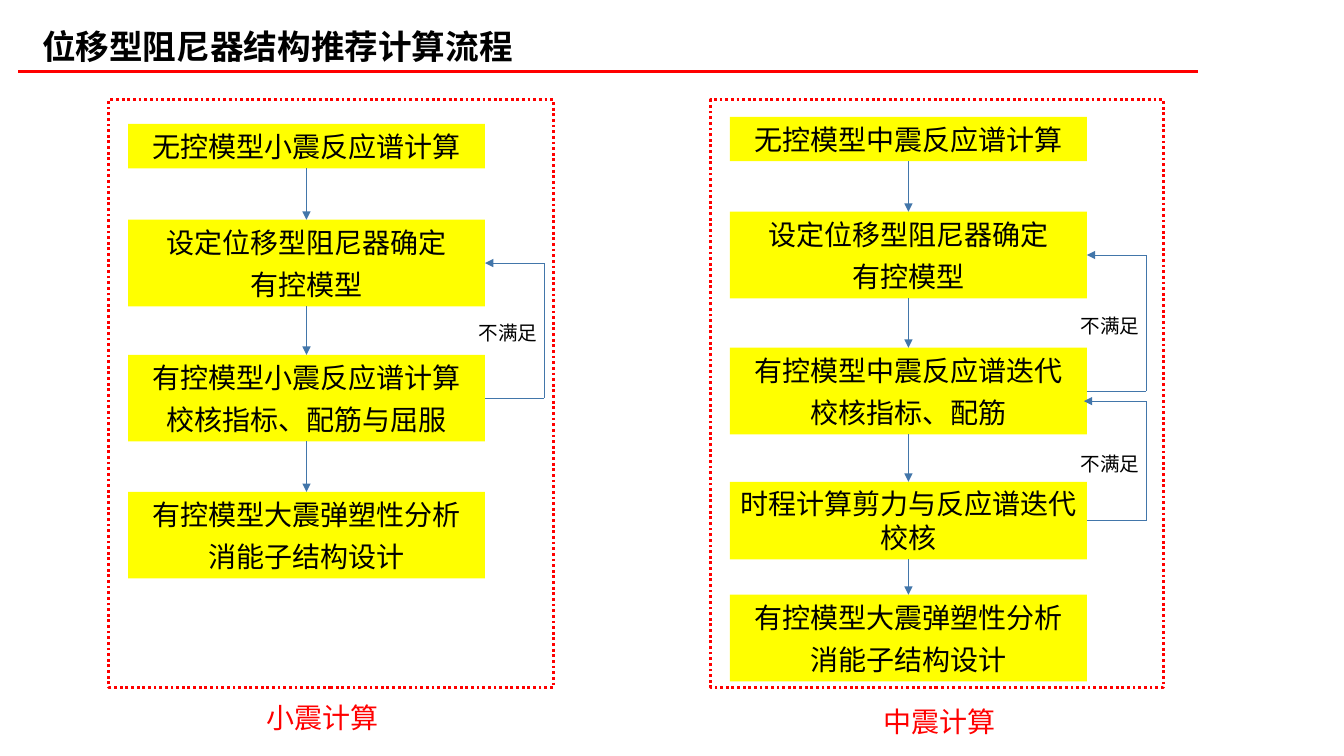
from dataclasses import dataclass

from lxml.etree import SubElement
from pptx import Presentation
from pptx.dml.color import RGBColor
from pptx.enum.dml import MSO_LINE
from pptx.enum.shapes import MSO_CONNECTOR, MSO_SHAPE
from pptx.enum.text import MSO_ANCHOR, MSO_AUTO_SIZE, PP_ALIGN
from pptx.oxml.ns import qn
from pptx.util import Inches, Pt


@dataclass(frozen=True)
class Theme:
    font: str = "Noto Sans CJK SC"
    black: RGBColor = RGBColor(0x00, 0x00, 0x00)
    red: RGBColor = RGBColor(0xFF, 0x00, 0x00)
    yellow: RGBColor = RGBColor(0xFF, 0xFF, 0x00)
    blue: RGBColor = RGBColor(0x42, 0x76, 0xAA)
    title_size: int = 24
    step_size: int = 20
    label_size: int = 14
    rule_width: float = 2.75
    frame_width: float = 2
    arrow_width: float = 0.5


@dataclass(frozen=True)
class Box:
    left: float
    top: float
    width: float
    height: float

    @property
    def right(self):
        return self.left + self.width

    @property
    def middle(self):
        return self.top + self.height / 2

    def lengths(self):
        return [Inches(value) for value in (self.left, self.top, self.width, self.height)]


@dataclass(frozen=True)
class Loop:
    source: int
    target: int
    drop: float = 0
    overlap: float = 0


THEME = Theme()
STEP_INSET = 0.19
STEP_WIDTH = 3.54
RISER_GAP = 0.59
LABEL_SHIFT = 2.88
LABEL_WIDTH = 1.57
LABEL_HEIGHT = 0.38


def write_text(shape, lines, size, color, align=None, bold=False, spacing=3, line_spacing=None, indent=0):
    frame = shape.text_frame
    frame.word_wrap = True
    frame.auto_size = MSO_AUTO_SIZE.SHAPE_TO_FIT_TEXT
    frame.text = "\n".join(lines)
    for index, paragraph in enumerate(frame.paragraphs):
        paragraph.alignment = align
        paragraph.space_before = Pt(spacing if index else 0)
        paragraph.space_after = Pt(spacing)
        if line_spacing:
            paragraph.line_spacing = line_spacing
        if indent:
            properties = paragraph._p.get_or_add_pPr()
            properties.set("marL", str(Inches(indent)))
            properties.set("indent", "0")
        for span in paragraph.runs:
            font = span.font
            font.name = THEME.font
            font.size = Pt(size)
            font.bold = bold
            font.color.rgb = color
            east_asian = SubElement(font._element, qn("a:ea"))
            east_asian.set("typeface", THEME.font)


def add_line(page, start, end, color=THEME.blue, width=THEME.arrow_width, arrow=False):
    points = [Inches(value) for value in (*start, *end)]
    line = page.shapes.add_connector(MSO_CONNECTOR.STRAIGHT, *points)
    line.line.color.rgb = color
    line.line.width = Pt(width)
    if arrow:
        SubElement(line.line._get_or_add_ln(), qn("a:tailEnd")).set("type", "triangle")
    SubElement(line._element.spPr, qn("a:effectLst"))
    return line


def add_title(page, box, text):
    title = page.shapes.add_textbox(*box.lengths())
    write_text(title, [text], THEME.title_size, THEME.black, PP_ALIGN.JUSTIFY,
               bold=True, spacing=6, line_spacing=1.2, indent=0.5)
    add_line(page, (0.18, 0.71), (11.88, 0.71), THEME.red, THEME.rule_width)


def add_frame(page, box):
    frame = page.shapes.add_shape(MSO_SHAPE.RECTANGLE, *box.lengths())
    frame.shadow.inherit = False
    frame.fill.background()
    frame.line.color.rgb = THEME.red
    frame.line.width = Pt(THEME.frame_width)
    frame.line.dash_style = MSO_LINE.ROUND_DOT


def add_step(page, box, lines):
    step = page.shapes.add_shape(MSO_SHAPE.RECTANGLE, *box.lengths())
    step.shadow.inherit = False
    step.fill.solid()
    step.fill.fore_color.rgb = THEME.yellow
    step.line.fill.background()
    step.text_frame.vertical_anchor = MSO_ANCHOR.MIDDLE
    write_text(step, lines, THEME.step_size, THEME.black, PP_ALIGN.CENTER)
    return step


def add_loop(page, boxes, shapes, loop):
    source, target = boxes[loop.source], boxes[loop.target]
    riser = source.right + RISER_GAP
    entry = target.middle + loop.drop
    foot = add_line(page, (source.right, source.middle), (riser, source.middle))
    foot.begin_connect(shapes[loop.source], 3)
    add_line(page, (riser, source.middle), (riser, entry))
    head = add_line(page, (riser, entry), (target.right - loop.overlap, entry), arrow=True)
    if not loop.drop:
        head.end_connect(shapes[loop.target], 3)
    center = (source.middle + entry) / 2
    label_box = Box(source.left + LABEL_SHIFT, center - LABEL_HEIGHT / 2, LABEL_WIDTH, LABEL_HEIGHT)
    label = page.shapes.add_textbox(*label_box.lengths())
    write_text(label, ["不满足"], THEME.label_size, THEME.black,
               spacing=6, line_spacing=1.2, indent=0.5)


def add_flow(page, box, steps, loops, caption, caption_shift, caption_gap):
    add_frame(page, box)
    boxes = [Box(box.left + STEP_INSET, box.top + offset, STEP_WIDTH, height)
             for offset, height, lines in steps]
    shapes = [add_step(page, place, lines) for place, (_, _, lines) in zip(boxes, steps)]
    for upper, lower in zip(shapes, shapes[1:]):
        arrow = add_line(page, (0, 0), (0, 0), arrow=True)
        arrow.begin_connect(upper, 2)
        arrow.end_connect(lower, 0)
    for loop in loops:
        add_loop(page, boxes, shapes, loop)
    caption_box = Box(box.left + caption_shift, box.top + box.height + caption_gap, 1.61, 0.44)
    text = page.shapes.add_textbox(*caption_box.lengths())
    write_text(text, [caption], THEME.step_size, THEME.red, PP_ALIGN.JUSTIFY)


def main():
    deck = Presentation()
    deck.slide_width, deck.slide_height = Inches(13.33), Inches(7.5)
    page = deck.slides.add_slide(deck.slide_layouts[6])
    add_title(page, Box(-0.18, 0.13, 9.7, 0.59), "位移型阻尼器结构推荐计算流程")
    damper_lines = ["设定位移型阻尼器确定", "有控模型"]
    final_lines = ["有控模型大震弹塑性分析", "消能子结构设计"]
    minor_steps = [
        (0.24, 0.44, ["无控模型小震反应谱计算"]),
        (1.19, 0.86, damper_lines),
        (2.53, 0.86, ["有控模型小震反应谱计算", "校核指标、配筋与屈服"]),
        (3.89, 0.86, final_lines),
    ]
    moderate_steps = [
        (0.17, 0.44, ["无控模型中震反应谱计算"]),
        (1.11, 0.86, damper_lines),
        (2.46, 0.86, ["有控模型中震反应谱迭代", "校核指标、配筋"]),
        (3.79, 0.77, ["时程计算剪力与反应谱迭代校核"]),
        (4.91, 0.86, final_lines),
    ]
    add_flow(page, Box(1.08, 0.99, 4.41, 5.83), minor_steps, [Loop(2, 1)], "小震计算", 1.46, 0.08)
    add_flow(page, Box(7.05, 0.99, 4.49, 5.83), moderate_steps,
             [Loop(2, 1), Loop(3, 2, 0.1, 0.03)], "中震计算", 1.61, 0.12)
    deck.save("out.pptx")


if __name__ == "__main__":
    main()
